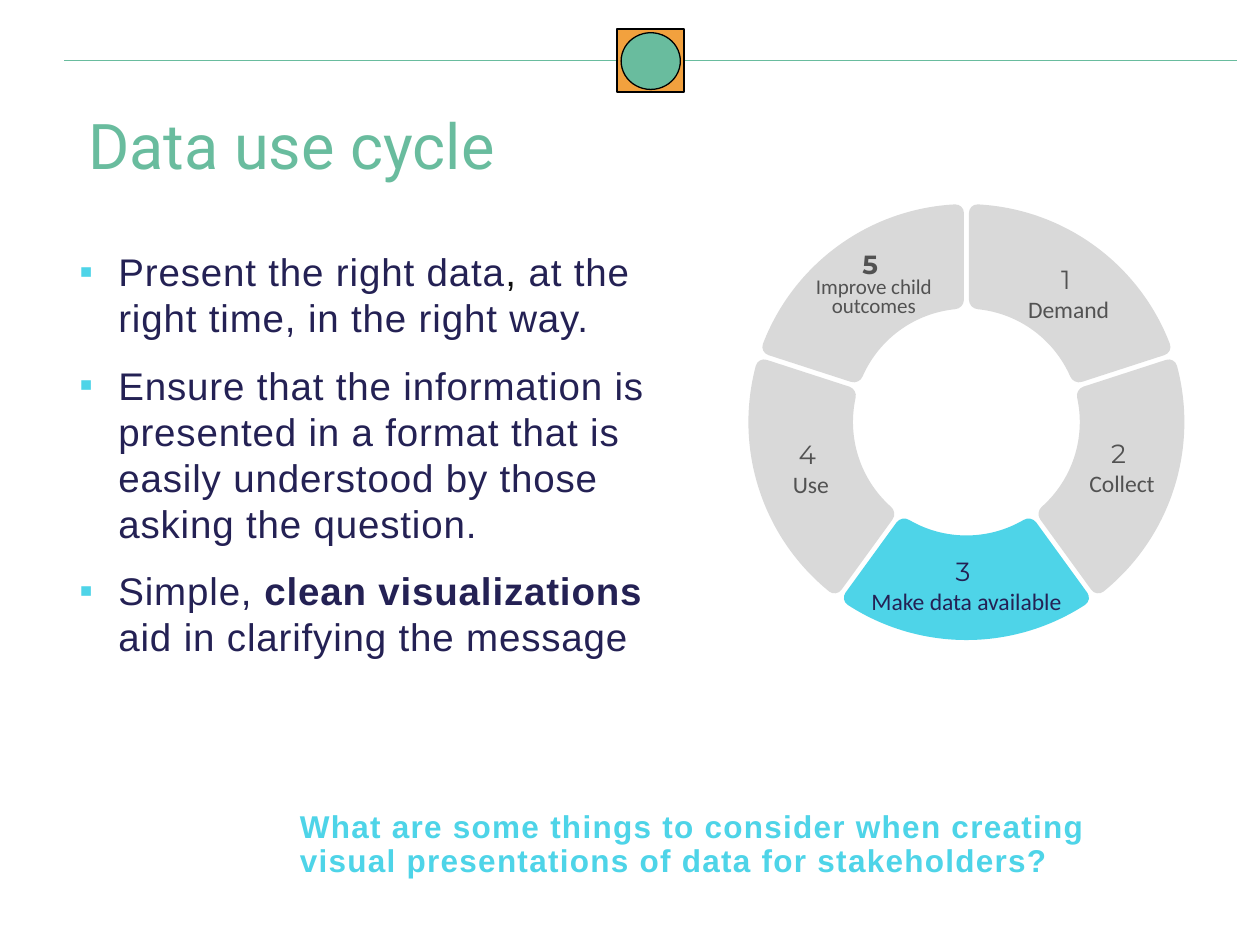
from dataclasses import dataclass
from math import asin, cos, pi, sin, tan

from lxml.etree import SubElement
from pptx import Presentation
from pptx.dml.color import RGBColor
from pptx.enum.shapes import MSO_CONNECTOR, MSO_SHAPE
from pptx.enum.text import MSO_ANCHOR, MSO_AUTO_SIZE, PP_ALIGN
from pptx.oxml.ns import qn
from pptx.util import Inches, Pt


@dataclass(frozen=True)
class Theme:
    green: str = "69BC9E"
    orange: str = "F2A13E"
    cyan: str = "4ED4E8"
    navy: str = "242154"
    black: str = "000000"
    ink: str = "0D0D0D"
    grey: str = "D9D9D9"
    dark: str = "525252"
    title: float = 36
    body: float = 22
    quote: float = 18
    digit: float = 15
    label: float = 13.5
    small: float = 12


THEME = Theme()
CENTER = (7.67, 3.35)
OUTER, INNER = 1.73, 0.9
GAP, ROUND = 0.04, 0.07
STEPS = 5


def rgb(code):
    return RGBColor.from_string(code)


def place(shape, box):
    shape.left, shape.top, shape.width, shape.height = map(Inches, box)


def add_run(para, text, size, color, face, bold=False, track=0):
    run = para.add_run()
    run.text = text
    font = run.font
    font.size, font.name, font.bold = Pt(size), face, bold
    font.color.rgb = rgb(color)
    if track:
        run._r.get_or_add_rPr().set("spc", str(round(track * 100)))


def add_bullet(para, color):
    props = para._p.get_or_add_pPr()
    indent = Inches(0.31)
    props.set("marL", str(indent))
    props.set("indent", str(-indent))
    tint = SubElement(props, qn("a:buClr"))
    SubElement(tint, qn("a:srgbClr")).set("val", color)
    SubElement(props, qn("a:buChar")).set("char", "▪")


def add_line(slide, start, end, color):
    line = slide.shapes.add_connector(
        MSO_CONNECTOR.STRAIGHT, *map(Inches, start + end))
    line.line.color.rgb = rgb(color)
    line.line.width = Pt(0.75)
    SubElement(line._element.spPr, qn("a:effectLst"))


def add_badge(slide, kind, box, fill, width):
    badge = slide.shapes.add_shape(kind, *map(Inches, box))
    badge.shadow.inherit = False
    badge.fill.solid()
    badge.fill.fore_color.rgb = rgb(fill)
    badge.line.color.rgb = rgb(THEME.black)
    badge.line.width = Pt(width)


def polar(radius, angle):
    return (CENTER[0] + radius * sin(angle), CENTER[1] - radius * cos(angle))


def blend(start, end, part):
    return tuple(a + (b - a) * part for a, b in zip(start, end))


def arc(radius, start, end):
    pull = 4 / 3 * tan((end - start) / 4)
    reach, lean = radius * (1 + pull ** 2) ** 0.5, asin(pull / (1 + pull ** 2) ** 0.5)
    return [polar(reach, start + lean), polar(reach, end - lean), polar(radius, end)]


def wedge(middle):
    def side_of(radius, side):
        return middle + side * (pi / STEPS - asin(GAP / 2 / radius))

    def leg(radius, side):
        inset = radius - ROUND if radius == OUTER else radius + ROUND
        return polar(inset, side_of(inset, side))

    def stop(radius, side):
        return side_of(radius, side) - side * ROUND / radius

    def bend(start, knot, end):
        return [blend(start, knot, 0.55), blend(end, knot, 0.55), end]

    def band(radius, side):
        first, last = stop(radius, side), stop(radius, -side)
        return [
            bend(leg(radius, side), polar(radius, side_of(radius, side)),
                 polar(radius, first)),
            arc(radius, first, middle),
            arc(radius, middle, last),
            bend(polar(radius, last), polar(radius, side_of(radius, -side)),
                 leg(radius, -side)),
        ]

    return leg(OUTER, -1), band(OUTER, -1) + [[leg(INNER, 1)]] + band(INNER, 1)


def curve(steps):
    for node in steps[1:]:
        steps[0].append(node[0])
        node.getparent().remove(node)
    steps[0].tag = qn("a:cubicBezTo")


def add_wedge(slide, index, color):
    start, parts = wedge((2 * index + 1) * pi / STEPS)
    pen = slide.shapes.build_freeform(*map(Inches, start))
    pen.add_line_segments([tuple(map(Inches, point))
                           for part in parts for point in part], close=True)
    shape = pen.convert_to_shape()
    nodes = iter(list(shape._element.iter(qn("a:lnTo"))))
    for part in parts:
        steps = [next(nodes) for _ in part]
        if len(steps) == 3:
            curve(steps)
    shape.shadow.inherit = False
    shape.fill.solid()
    shape.fill.fore_color.rgb = rgb(color)
    shape.line.fill.background()


def add_box(slide, box):
    frame = slide.shapes.add_textbox(*map(Inches, box)).text_frame
    frame.word_wrap = True
    return frame


def add_label(slide, box, digit, text, color, size, bold, pitch):
    frame = add_box(slide, box)
    frame.auto_size = MSO_AUTO_SIZE.SHAPE_TO_FIT_TEXT
    head, tail = frame.paragraphs[0], frame.add_paragraph()
    head.alignment = tail.alignment = PP_ALIGN.CENTER
    add_run(head, digit, THEME.digit, color, "Montserrat", bold)
    tail.line_spacing = pitch
    add_run(tail, text, size, color, "Calibri")


def add_title(slide, text):
    title = slide.shapes.title
    place(title, (0.6, 0.86, 7.47, 0.92))
    frame = title.text_frame
    frame.auto_size = MSO_AUTO_SIZE.NONE
    frame.vertical_anchor = MSO_ANCHOR.TOP
    para = frame.paragraphs[0]
    para.alignment = PP_ALIGN.LEFT
    para.line_spacing = 0.9
    add_run(para, text, THEME.title, THEME.green, "Roboto")


def add_list(slide, items):
    body = slide.placeholders[1]
    place(body, (0.53, 1.92, 4.7, 3.32))
    frame = body.text_frame
    frame.auto_size = MSO_AUTO_SIZE.NONE
    for i, item in enumerate(items):
        para = frame.add_paragraph() if i else frame.paragraphs[0]
        add_bullet(para, THEME.cyan)
        para.space_before, para.space_after = Pt(0), Pt(12)
        for text, color, bold in item:
            add_run(para, text, THEME.body, color, "Arial", bold, 0.5)


def add_quote(slide, text):
    frame = add_box(slide, (2.31, 6.4, 6.5, 0.64))
    frame.margin_left = frame.margin_right = Inches(0.07)
    frame.margin_top = frame.margin_bottom = Inches(0.04)
    para = frame.paragraphs[0]
    para.line_spacing = 0.9
    add_run(para, text, THEME.quote, THEME.cyan, "Arial", True, 0.75)


def main():
    deck = Presentation()
    deck.slide_width, deck.slide_height = Inches(10), Inches(7.5)
    slide = deck.slides.add_slide(deck.slide_layouts[1])
    navy, dark = THEME.navy, THEME.dark
    add_line(slide, (0.51, 0.48), (9.82, 0.48), THEME.green)
    add_badge(slide, MSO_SHAPE.RECTANGLE, (4.9, 0.23, 0.53, 0.5), THEME.orange, 1)
    add_badge(slide, MSO_SHAPE.OVAL, (4.93, 0.26, 0.47, 0.45), THEME.green, 0.75)
    add_title(slide, "Data use cycle")
    add_list(slide, [
        [("Present the right data", navy, False), (",", THEME.ink, False),
         (" at the right time, in the right way.", navy, False)],
        [("Ensure that the information is presented in a format that is easily "
          "understood by those asking the question.", navy, False)],
        [("Simple, ", navy, False), ("clean visualizations ", navy, True),
         ("aid in clarifying the message", navy, False)],
    ])
    labels = [
        ((7.81, 2.04, 1.3, 0.58), "1", " Demand", dark, THEME.label, False, 1.0),
        ((8.33, 3.42, 1.15, 0.58), "2 ", "Collect", dark, THEME.label, False, 1.0),
        ((6.63, 4.36, 2.08, 0.58), "3 ", "Make data available", navy, THEME.label, False, 1.0),
        ((5.46, 3.43, 1.95, 0.58), "4 ", "Use", dark, THEME.label, False, 1.0),
        ((6.24, 1.92, 1.39, 0.66), "5 ", "Improve child outcomes", dark, THEME.small, True, 0.75),
    ]
    for i in range(STEPS):
        add_wedge(slide, i, THEME.cyan if i == 2 else THEME.grey)
    for label in labels:
        add_label(slide, *label)
    add_quote(slide, "What are some things to consider when creating visual "
                     "presentations of data for stakeholders?")
    deck.save("out.pptx")


if __name__ == "__main__":
    main()
